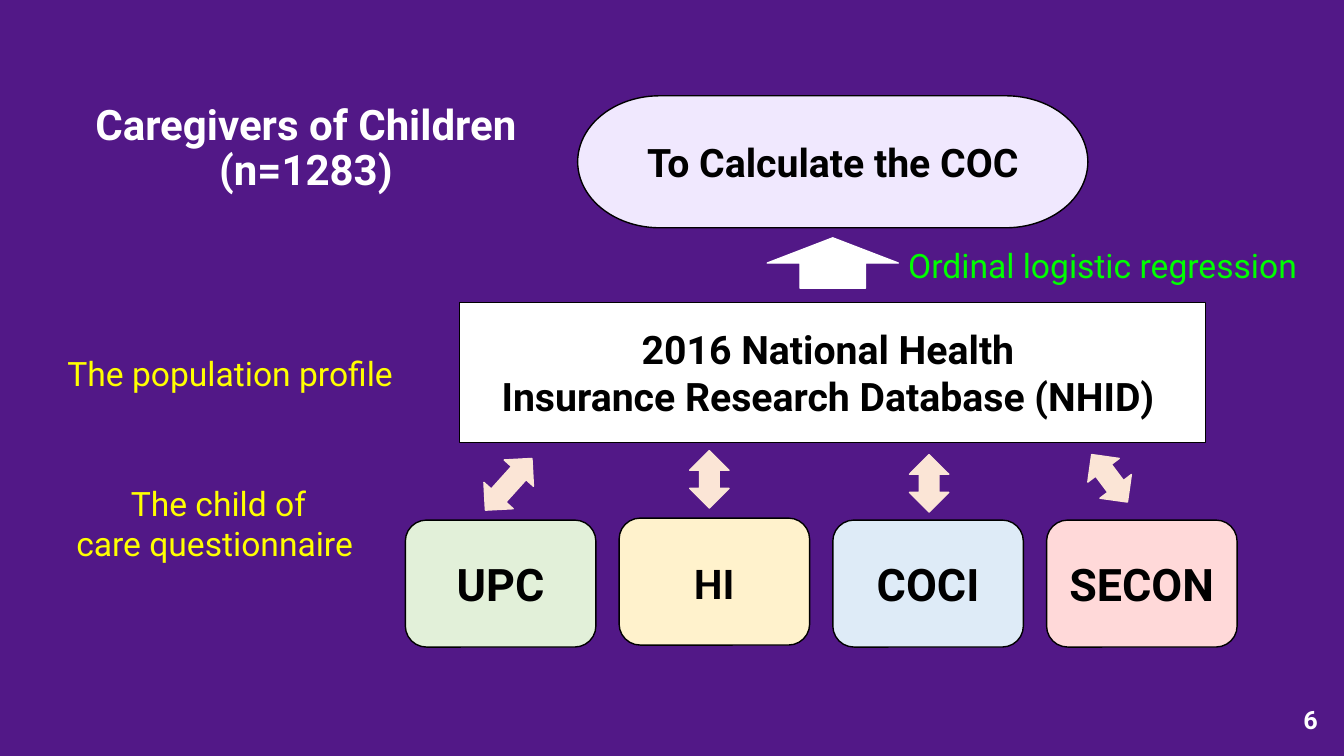
from dataclasses import dataclass

from pptx import Presentation
from pptx.dml.color import RGBColor
from pptx.enum.shapes import MSO_SHAPE
from pptx.enum.text import MSO_ANCHOR, MSO_AUTO_SIZE, PP_ALIGN
from pptx.util import Emu, Pt

PX = 9144  # one hundredth of an inch
TITLE_ONLY = 5
LEFT, CENTER, RIGHT = PP_ALIGN.LEFT, PP_ALIGN.CENTER, PP_ALIGN.RIGHT
TOP, MIDDLE = MSO_ANCHOR.TOP, MSO_ANCHOR.MIDDLE
RECTANGLE, ROUNDED = MSO_SHAPE.RECTANGLE, MSO_SHAPE.ROUNDED_RECTANGLE
TERMINATOR = MSO_SHAPE.FLOWCHART_TERMINATOR
UP_ARROW, DOUBLE_ARROW = MSO_SHAPE.UP_ARROW, MSO_SHAPE.LEFT_RIGHT_ARROW

COLORS = {
    "purple": "521887", "white": "FFFFFF", "black": "000000",
    "yellow": "FFFF00", "lime": "00FF00", "peach": "FBE5D6",
    "lavender": "F0E8FE", "green": "E2F0D9", "cream": "FFF2CC",
    "blue": "DEEBF7", "pink": "FFD9D9",
}


@dataclass(frozen=True)
class Words:
    lines: tuple[str, ...]
    size: int
    color: str = "black"
    bold: bool = True
    font: str = "Roboto"
    align: PP_ALIGN = CENTER
    anchor: MSO_ANCHOR = MIDDLE
    wrap: bool = True


@dataclass(frozen=True)
class Figure:
    kind: MSO_SHAPE
    bounds: tuple[int, int, int, int]
    fill: str
    line: str = "black"
    rotation: int = 0
    words: Words | None = None


@dataclass(frozen=True)
class Label:
    bounds: tuple[int, int, int, int]
    words: Words


def color_of(name: str) -> RGBColor:
    return RGBColor.from_string(COLORS[name])


def write(frame, words: Words) -> None:
    settings = {"word_wrap": words.wrap, "vertical_anchor": words.anchor,
                "auto_size": MSO_AUTO_SIZE.NONE}
    for name, value in settings.items():
        setattr(frame, name, value)
    frame.text = "\n".join(words.lines)
    font_values = {"name": words.font, "size": Pt(words.size), "bold": words.bold}
    for para in frame.paragraphs:
        para.alignment = words.align
        for span in para.runs:
            for name, value in font_values.items():
                setattr(span.font, name, value)
            span.font.color.rgb = color_of(words.color)


def draw_figure(page, figure: Figure) -> None:
    shape = page.shapes.add_shape(figure.kind, *(Emu(v * PX) for v in figure.bounds))
    shape.shadow.inherit = False
    shape.rotation = figure.rotation
    shape.fill.solid()
    shape.fill.fore_color.rgb = color_of(figure.fill)
    shape.line.color.rgb = color_of(figure.line)
    shape.line.width = Pt(1)
    if figure.words:
        write(shape.text_frame, figure.words)


def draw_label(page, label: Label) -> None:
    box = page.shapes.add_textbox(*(Emu(v * PX) for v in label.bounds))
    write(box.text_frame, label.words)


def arrow(left: int, top: int, width: int, rotation: int) -> Figure:
    return Figure(DOUBLE_ARROW, (left, top, width, 39), "peach", "peach", rotation)


# Flow from the database to the calculation
DATABASE = Words(("2016 National Health ", "Insurance Research Database (NHID) "), 28)
FLOW = (
    Figure(RECTANGLE, (456, 300, 740, 139), "white", words=DATABASE),
    Figure(UP_ARROW, (761, 236, 130, 50), "white", "white"),
    Figure(TERMINATOR, (573, 95, 506, 131), "lavender",
           words=Words(("To Calculate the COC",), 28)),
)

# Double arrows between the database and its measures
ARROWS = (arrow(470, 461, 69, 312), arrow(675, 456, 57, 270),
          arrow(893, 460, 57, 270), arrow(1071, 455, 59, 233))

# Row of measures: name, fill, font, top
MEASURES = (("UPC", "green", "Roboto", 516), ("HI", "cream", "Calibri", 514),
            ("COCI", "blue", "Roboto", 516), ("SECON", "pink", "Roboto", 516))
MEASURE_LEFT, MEASURE_STEP = 402, 212

# Free text
LABELS = (
    Label((57, 345, 378, 50),
          Words(("The population profile",), 24, "yellow", False, align=LEFT, anchor=TOP)),
    Label((57, 474, 320, 91),
          Words((" The child of ", "care questionnaire "), 24, "yellow", False,
                anchor=TOP, wrap=False)),
    Label((891, 238, 427, 50),
          Words(("Ordinal logistic regression",), 24, "lime", False,
                align=LEFT, anchor=TOP, wrap=False)),
    Label((1017, 694, 300, 40), Words(("6",), 18, "white", align=RIGHT)),
)


def main() -> None:
    deck = Presentation()
    deck.slide_width, deck.slide_height = Emu(1333 * PX), Emu(750 * PX)
    page = deck.slides.add_slide(deck.slide_layouts[TITLE_ONLY])
    page.background.fill.solid()
    page.background.fill.fore_color.rgb = color_of("purple")

    # Title
    title = page.shapes.title
    for name, value in zip(("left", "top", "width", "height"), (34, 35, 539, 226)):
        setattr(title, name, Emu(value * PX))
    write(title.text_frame, Words(("Caregivers of Children\v(n=1283)",), 30, "white"))
    title.text_frame.paragraphs[0].line_spacing = 0.9

    # Diagram
    for figure in FLOW + ARROWS:
        draw_figure(page, figure)
    for index, (name, fill, font, top) in enumerate(MEASURES):
        bounds = (MEASURE_LEFT + index * MEASURE_STEP, top, 189, 126)
        draw_figure(page, Figure(ROUNDED, bounds, fill,
                                 words=Words((name,), 32, font=font)))
    for label in LABELS:
        draw_label(page, label)

    deck.save("out.pptx")


if __name__ == "__main__":
    main()
